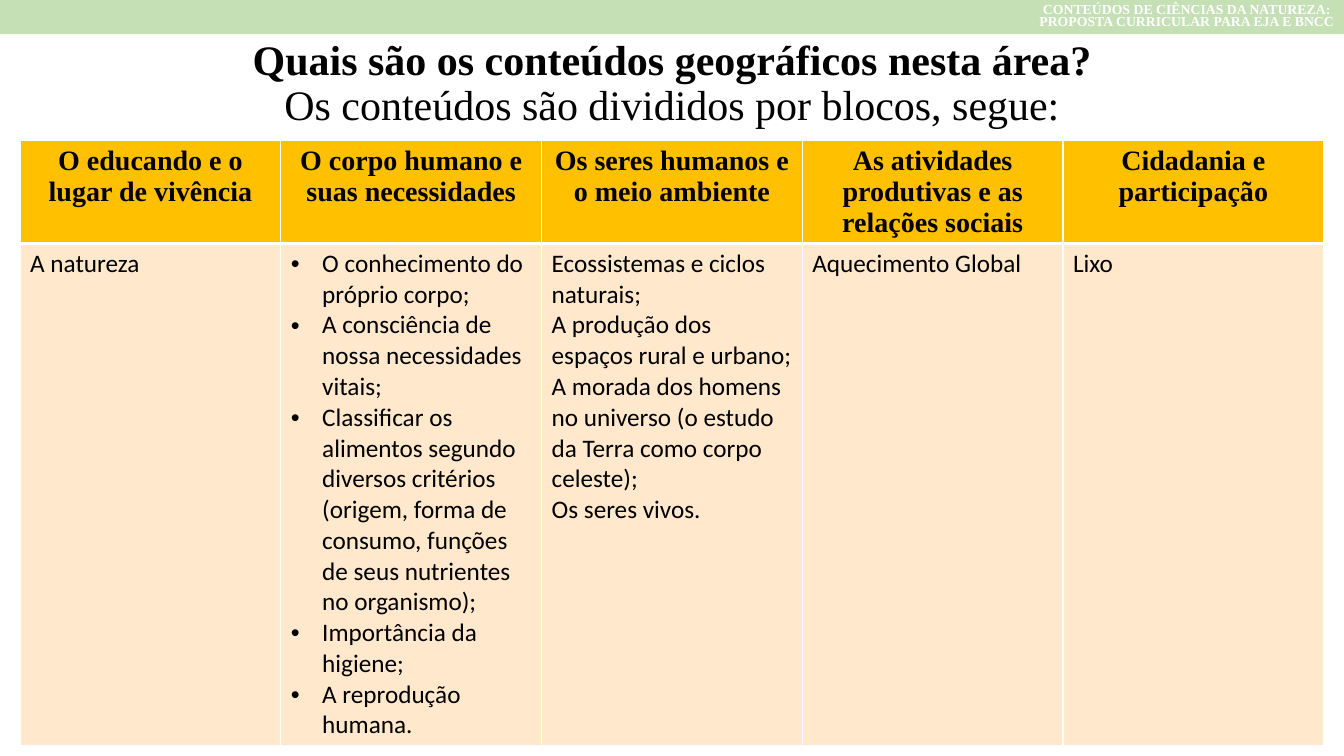
from dataclasses import dataclass

from lxml import etree
from pptx import Presentation
from pptx.dml.color import RGBColor
from pptx.enum.shapes import MSO_SHAPE
from pptx.enum.text import MSO_ANCHOR, MSO_AUTO_SIZE, PP_ALIGN
from pptx.oxml.ns import qn
from pptx.util import Inches, Pt

RECTANGLE = MSO_SHAPE.RECTANGLE
MIDDLE = MSO_ANCHOR.MIDDLE
NO_AUTOFIT = MSO_AUTO_SIZE.NONE
LEFT, CENTER, RIGHT = PP_ALIGN.LEFT, PP_ALIGN.CENTER, PP_ALIGN.RIGHT


@dataclass(frozen=True)
class Theme:
    serif: str = "Times New Roman"
    sans: str = "Calibri"
    ink: str = "000000"
    white: str = "FFFFFF"
    strip: str = "C5E0B4"
    header: str = "FFC000"
    body: str = "FFE8CC"
    title_size: float = 30
    header_size: float = 20
    body_size: float = 18
    strip_size: float = 9.8
    thin: float = 1
    thick: float = 3


def write(paragraph, text, *, font, size, color, bold=False, align=LEFT, spacing=None):
    run = paragraph.add_run()
    run.text = text
    run.font.name = font
    run.font.size = Pt(size)
    run.font.bold = bold
    run.font.color.rgb = RGBColor.from_string(color)
    paragraph.alignment = align
    if spacing:
        paragraph.line_spacing = spacing


def write_lines(text_frame, lines, bulleted=False, **style):
    for index, line in enumerate(lines):
        paragraph = text_frame.add_paragraph() if index else text_frame.paragraphs[0]
        write(paragraph, line, **style)
        if bulleted:
            add_bullet(paragraph)


def add_bullet(paragraph):
    properties = paragraph._p.get_or_add_pPr()
    indent = Inches(0.31)
    properties.set("marL", str(indent))
    properties.set("indent", str(-indent))
    etree.SubElement(properties, qn("a:buFont"), typeface="Arial")
    etree.SubElement(properties, qn("a:buChar"), char="•")


def add_border(cell, side, width, color):
    properties = cell._tc.get_or_add_tcPr()
    line = etree.SubElement(properties, qn(f"a:ln{side}"), w=str(Pt(width)))
    fill = etree.SubElement(line, qn("a:solidFill"))
    etree.SubElement(fill, qn("a:srgbClr"), val=color)


class SlideBuilder:
    """Draws themed elements on one slide, placed in percent of its size."""

    def __init__(self, presentation, theme):
        self.presentation = presentation
        self.theme = theme
        self.slide = presentation.slides.add_slide(presentation.slide_layouts[5])

    def box(self, left, top, width, height):
        across = self.presentation.slide_width / 100
        down = self.presentation.slide_height / 100
        return [round(v) for v in (left * across, top * down, width * across, height * down)]

    def title(self, heading, subtitle, place):
        theme = self.theme
        shape = self.slide.shapes.title
        shape.left, shape.top, shape.width, shape.height = self.box(*place)
        text_frame = shape.text_frame
        text_frame.auto_size = NO_AUTOFIT
        text_frame.vertical_anchor = MIDDLE
        paragraph = text_frame.paragraphs[0]
        style = dict(font=theme.serif, size=theme.title_size, color=theme.ink,
                     align=CENTER, spacing=0.9)
        write(paragraph, heading, bold=True, **style)
        paragraph.add_line_break()
        etree.SubElement(paragraph._p[-1], qn("a:rPr"), sz=str(theme.title_size * 100))
        write(paragraph, subtitle, **style)

    def table(self, blocks, place, header_share):
        theme = self.theme
        left, top, width, height = self.box(*place)
        table = self.slide.shapes.add_table(2, len(blocks), left, top, width, height).table
        table.horz_banding = False
        table.rows[0].height = round(height * header_share)
        table.rows[1].height = height - table.rows[0].height
        for column, (heading, contents, bulleted) in enumerate(blocks):
            table.columns[column].width = width // len(blocks)
            self.cell(table.cell(0, column), [heading], theme.header, (theme.thin, theme.thick),
                      font=theme.serif, size=theme.header_size, bold=True, align=CENTER)
            self.cell(table.cell(1, column), contents, theme.body, (theme.thick, theme.thin),
                      bulleted=bulleted, font=theme.sans, size=theme.body_size)

    def cell(self, cell, lines, fill, rules, **style):
        theme = self.theme
        for side, width in zip("LRTB", (theme.thin, theme.thin, *rules)):
            add_border(cell, side, width, theme.white)
        cell.fill.solid()
        cell.fill.fore_color.rgb = RGBColor.from_string(fill)
        write_lines(cell.text_frame, lines, color=theme.ink, **style)

    def strip(self, lines, place):
        theme = self.theme
        shape = self.slide.shapes.add_shape(RECTANGLE, *self.box(*place))
        shape.shadow.inherit = False
        shape.fill.solid()
        shape.fill.fore_color.rgb = RGBColor.from_string(theme.strip)
        shape.line.fill.background()
        shape.text_frame.word_wrap = True
        shape.text_frame.vertical_anchor = MIDDLE
        write_lines(shape.text_frame, lines, font=theme.serif, size=theme.strip_size,
                    color=theme.white, bold=True, align=RIGHT, spacing=0.7)


BLOCKS = [
    ("O educando e o lugar de vivência", ["A natureza"], False),
    ("O corpo humano e suas necessidades", [
        "O conhecimento do próprio corpo;",
        "A consciência de nossa necessidades vitais;",
        "Classificar os alimentos segundo diversos critérios "
        "(origem, forma de consumo, funções de seus nutrientes no organismo);",
        "Importância da higiene;",
        "A reprodução humana.",
    ], True),
    ("Os seres humanos e o meio ambiente", [
        "Ecossistemas e ciclos naturais;",
        "A produção dos espaços rural e urbano;",
        "A morada dos homens no universo (o estudo da Terra como corpo celeste);",
        "Os seres vivos.",
    ], False),
    ("As atividades produtivas e as relações sociais", ["Aquecimento Global"], False),
    ("Cidadania e participação", ["Lixo"], False),
]


def main():
    presentation = Presentation()
    presentation.slide_width = Inches(13.33)
    presentation.slide_height = Inches(7.5)
    builder = SlideBuilder(presentation, Theme())
    builder.title("Quais são os conteúdos geográficos nesta área?",
                  "Os conteúdos são divididos por blocos, segue:", (6.9, 1.47, 86.25, 19.33))
    builder.table(BLOCKS, (1.5, 18.53, 97, 80), header_share=0.17)
    builder.strip(["CONTEÚDOS DE CIÊNCIAS DA NATUREZA: ",
                   "PROPOSTA CURRICULAR PARA EJA E BNCC"], (0, 0, 100, 4.53))
    presentation.save("out.pptx")


if __name__ == "__main__":
    main()
